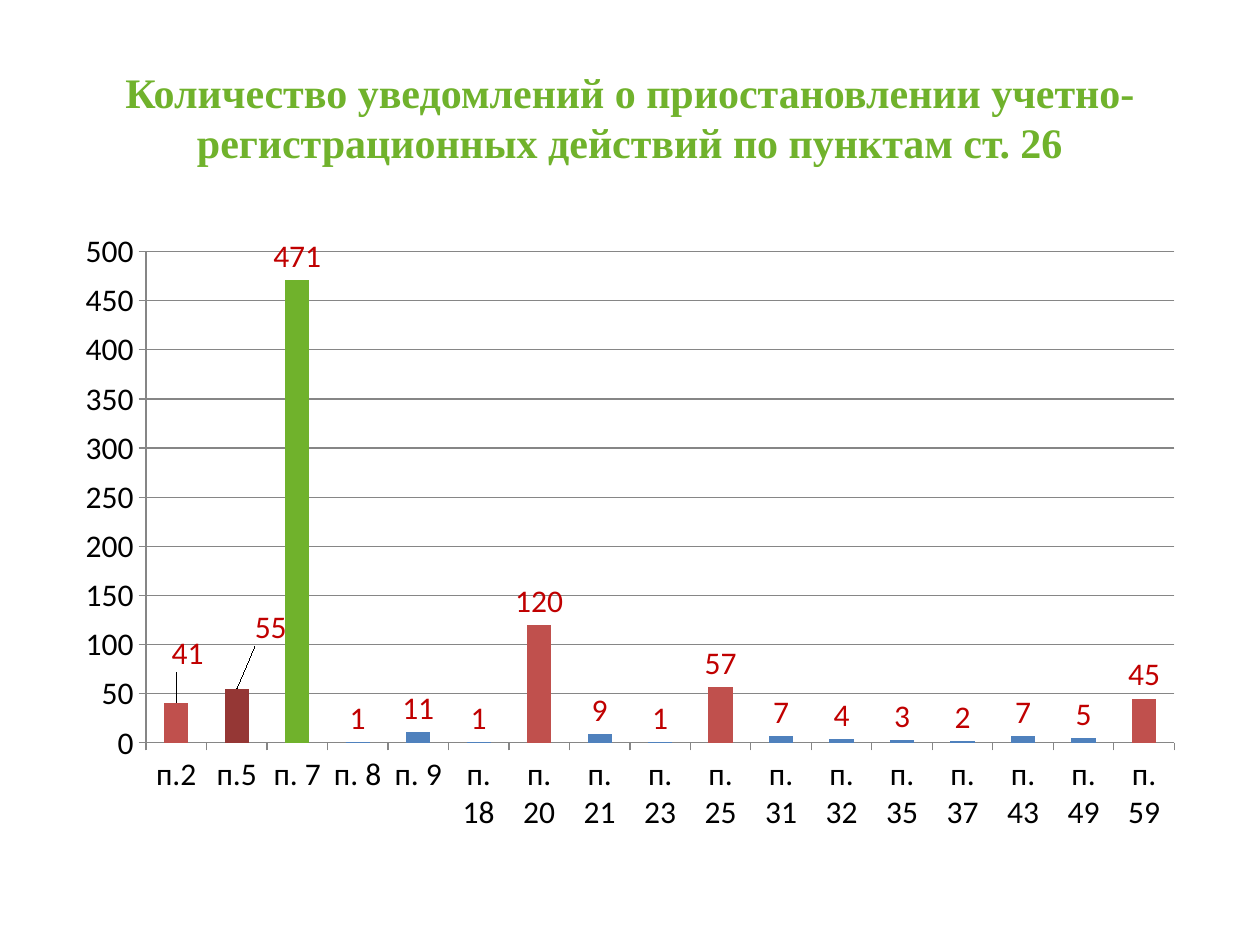
from lxml import etree
from pptx import Presentation
from pptx.chart.data import CategoryChartData
from pptx.dml.color import RGBColor
from pptx.enum.chart import XL_CHART_TYPE, XL_LABEL_POSITION, XL_TICK_MARK
from pptx.enum.text import MSO_ANCHOR, PP_ALIGN
from pptx.oxml.ns import qn
from pptx.util import Pt

COLUMNS = XL_CHART_TYPE.COLUMN_CLUSTERED
OUTSIDE_END = XL_LABEL_POSITION.OUTSIDE_END
TICK_OUT = XL_TICK_MARK.OUTSIDE
MIDDLE = MSO_ANCHOR.MIDDLE
CENTER = PP_ALIGN.CENTER

GREEN = RGBColor(0x70, 0xB2, 0x2C)
BLUE = RGBColor(0x4F, 0x81, 0xBD)
RED = RGBColor(0xC0, 0x50, 0x4D)
DARK_RED = RGBColor(0x95, 0x37, 0x35)
LABEL_RED = RGBColor(0xC0, 0x00, 0x00)
BLACK = RGBColor(0x00, 0x00, 0x00)
GREY = RGBColor(0x86, 0x86, 0x86)

PX = 914400 / 126
SLIDE_SIZE = (1260, 945)
TITLE_BOX = (63, 38, 1134, 157)
CHART_BOX = (63, 220, 1134, 624)

TITLE = ("Количество уведомлений о приостановлении учетно-регистрационных "
         "действий по пунктам ст. 26")
NOTICES = {
    "п.2": 41, "п.5": 55, "п. 7": 471, "п. 8": 1, "п. 9": 11, "п. 18": 1,
    "п. 20": 120, "п. 21": 9, "п. 23": 1, "п. 25": 57, "п. 31": 7, "п. 32": 4,
    "п. 35": 3, "п. 37": 2, "п. 43": 7, "п. 49": 5, "п. 59": 45,
}
HIGHLIGHTS = {"п.2": RED, "п.5": DARK_RED, "п. 7": GREEN,
              "п. 20": RED, "п. 25": RED, "п. 59": RED}
# Label shifts as fractions of the chart's width and height
LABEL_SHIFTS = {"п.2": (0.01, -0.04), "п.5": (0.03, -0.06)}


def emu(lengths):
    return [round(length * PX) for length in lengths]


def style_font(font, name, size, color, bold=False):
    font.name = name
    font.size = Pt(size)
    font.bold = bold
    font.color.rgb = color


def add_title(slide, box):
    title = slide.shapes.title
    title.left, title.top, title.width, title.height = emu(box)
    frame = title.text_frame
    frame.text = TITLE
    frame.word_wrap = True
    frame.vertical_anchor = MIDDLE
    heading = frame.paragraphs[0]
    heading.alignment = CENTER
    style_font(heading.font, "Times New Roman", 24, GREEN, bold=True)


def shift_label(label_xml, shift):
    """Move a data label away from its automatic place."""
    layout = etree.Element(qn("c:layout"))
    manual = etree.SubElement(layout, qn("c:manualLayout"))
    for axis, distance in zip("xy", shift):
        etree.SubElement(manual, qn(f"c:{axis}")).set("val", str(distance))
    label_xml.find(qn("c:idx")).addnext(layout)


def style_axis(axis, gridlines):
    axis.major_tick_mark = TICK_OUT
    axis.has_major_gridlines = gridlines
    axis.format.line.color.rgb = GREY
    if gridlines:
        axis.major_gridlines.format.line.color.rgb = GREY


def add_notice_chart(slide, box):
    data = CategoryChartData()
    data.categories = list(NOTICES)
    data.add_series("Series 1", list(NOTICES.values()))
    chart = slide.shapes.add_chart(COLUMNS, *emu(box), data).chart
    chart.has_legend = False
    chart.has_title = False
    style_font(chart.font, "Calibri", 18, BLACK)
    style_axis(chart.category_axis, gridlines=False)
    style_axis(chart.value_axis, gridlines=True)

    plot = chart.plots[0]
    plot.gap_width = 150
    plot.vary_by_categories = False
    notices = plot.series[0]
    notices.format.fill.solid()
    notices.format.fill.fore_color.rgb = BLUE
    labels = notices.data_labels
    labels.show_value = True
    labels.position = OUTSIDE_END
    style_font(labels.font, "Calibri", 18, LABEL_RED)

    clauses = list(NOTICES)
    for clause, color in HIGHLIGHTS.items():
        fill = notices.points[clauses.index(clause)].format.fill
        fill.solid()
        fill.fore_color.rgb = color
    for clause in LABEL_SHIFTS:
        label = notices.points[clauses.index(clause)].data_label
        label.position = OUTSIDE_END
        style_font(label.font, "Calibri", 18, LABEL_RED)
    for label_xml, shift in zip(chart.element.iter(qn("c:dLbl")),
                                LABEL_SHIFTS.values()):
        shift_label(label_xml, shift)


def main():
    deck = Presentation()
    deck.slide_width, deck.slide_height = emu(SLIDE_SIZE)
    slide = deck.slides.add_slide(deck.slide_layouts.get_by_name("Title Only"))
    add_title(slide, TITLE_BOX)
    add_notice_chart(slide, CHART_BOX)
    deck.save("out.pptx")


if __name__ == "__main__":
    main()
